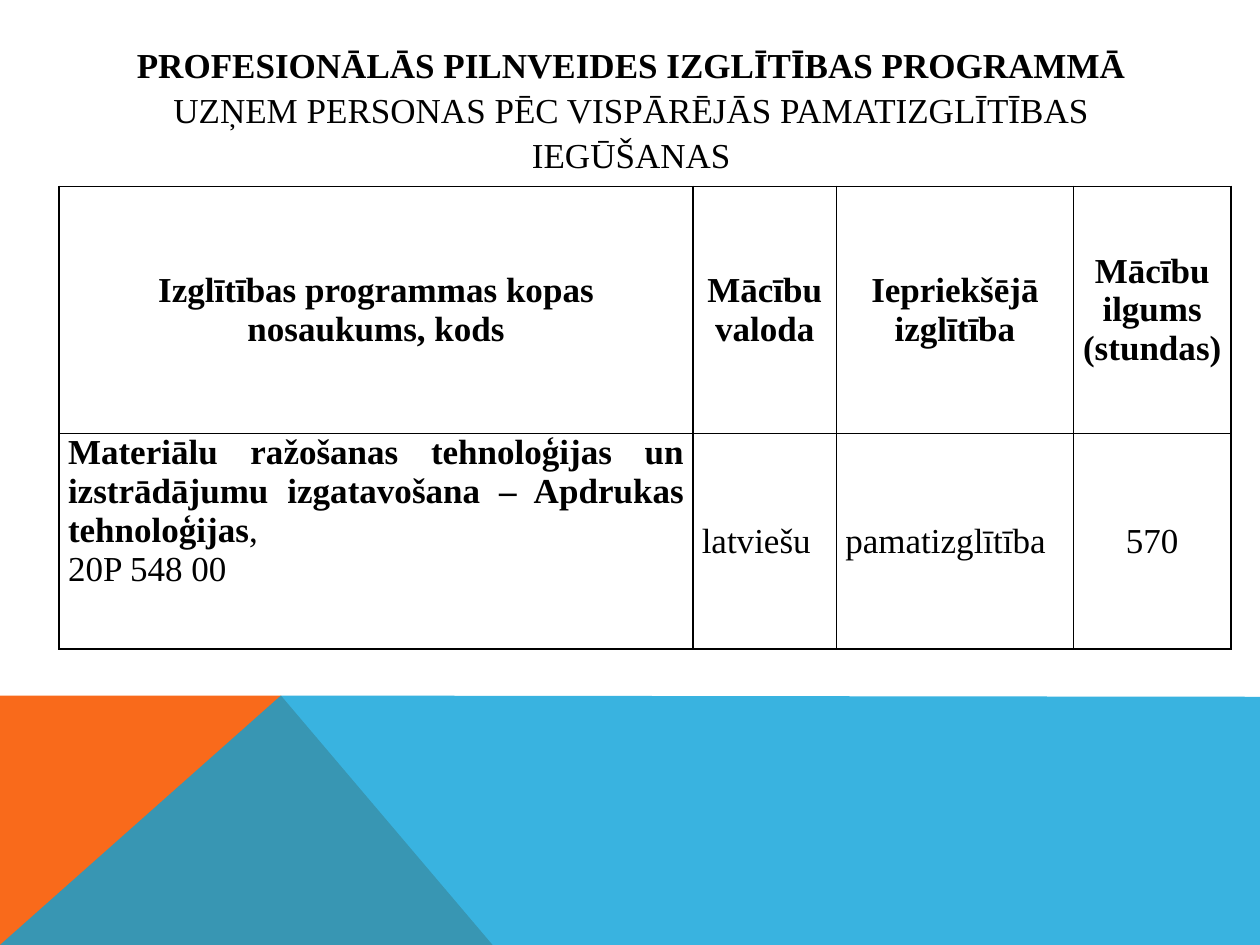
"""Build the slide on the professional development programme."""
from lxml.etree import SubElement as Sub
from pptx import Presentation
from pptx.dml.color import RGBColor as Rgb
from pptx.enum.text import MSO_ANCHOR as Anchor, PP_ALIGN as Align
from pptx.oxml.ns import qn
from pptx.util import Inches, Pt

HUES = {"ink": "000000", "orange": "F96A1B", "blue": "08A1D9"}


def write(para, parts, align):
    para.alignment = align
    for text, bold in parts:
        run = para.add_run()
        run.text = text
        run.font.name = "Times New Roman"
        run.font.size = Pt(20)
        run.font.bold = bold
        run.font.color.rgb = Rgb.from_string(HUES["ink"])


def draw(points, hue):
    spots = [(Inches(x), Inches(y)) for x, y in points]
    pen = slide.shapes.build_freeform(*spots[0])
    pen.add_line_segments(spots[1:], close=True)
    shape = pen.convert_to_shape()
    shape.shadow.inherit = False
    shape.line.fill.background()
    shape.fill.solid()
    shape.fill.fore_color.rgb = Rgb.from_string(HUES[hue])
    return shape


deck = Presentation()
deck.slide_width, deck.slide_height = Inches(10), Inches(7.5)
slide = deck.slides.add_slide(deck.slide_layouts[6])

draw([(0, 7.5), (0, 5.52), (2.23, 5.52), (3.91, 7.5)], "orange")
band = draw([(0, 7.5), (2.23, 5.52), (10, 5.53), (10, 7.5)], "blue")
tint = next(band.element.spPr.iter(qn("a:srgbClr")))
Sub(tint, qn("a:alpha"), val="80000")

title = slide.shapes.add_textbox(Inches(0.9), Inches(0.31), Inches(8.22), Inches(1.09))
frame = title.text_frame
frame.word_wrap = True
frame.vertical_anchor = Anchor.MIDDLE
head = frame.paragraphs[0]
head.line_spacing = 1.08
write(head, [
    ("PROFESIONĀLĀS PILNVEIDES IZGLĪTĪBAS PROGRAMMĀ ", True),
    ("UZŅEM PERSONAS PĒC VISPĀRĒJĀS PAMATIZGLĪTĪBAS IEGŪŠANAS", False),
], Align.CENTER)

names = ["Izglītības programmas kopas nosaukums, kods", "Mācību valoda",
         "Iepriekšējā izglītība", "Mācību ilgums (stundas)"]
course = [
    [("Materiālu ražošanas tehnoloģijas un izstrādājumu izgatavošana – "
      "Apdrukas tehnoloģijas", True), (",", False)],
    [("20P 548 00", False)],
]
rows = [
    [([[(name, True)]], Align.CENTER, Anchor.MIDDLE) for name in names],
    [(course, Align.JUSTIFY, Anchor.TOP),
     ([[("latviešu", False)]], Align.LEFT, Anchor.MIDDLE),
     ([[("pamatizglītība", False)]], Align.LEFT, Anchor.MIDDLE),
     ([[("570", False)]], Align.CENTER, Anchor.MIDDLE)],
]
table = slide.shapes.add_table(2, 4, Inches(0.47), Inches(1.48),
                               Inches(9.3), Inches(3.67)).table
for col, width in zip(table.columns, [5.03, 1.14, 1.88, 1.25]):
    col.width = Inches(width)
for row, height, items in zip(table.rows, [1.96, 1.71], rows):
    row.height = Inches(height)
    for cell, (paras, align, anchor) in zip(row.cells, items):
        cell.vertical_anchor = anchor
        cell.margin_left = cell.margin_right = Inches(0.07)
        cell.margin_top = cell.margin_bottom = 0
        props = cell._tc.get_or_add_tcPr()
        for side in "LRTB":
            edge = Sub(props, qn(f"a:ln{side}"), w=str(Pt(1)))
            Sub(Sub(edge, qn("a:solidFill")), qn("a:srgbClr"), val=HUES["ink"])
        cell.fill.background()
        frame = cell.text_frame
        for i, parts in enumerate(paras):
            para = frame.add_paragraph() if i else frame.paragraphs[0]
            write(para, parts, align)

deck.save("out.pptx")
